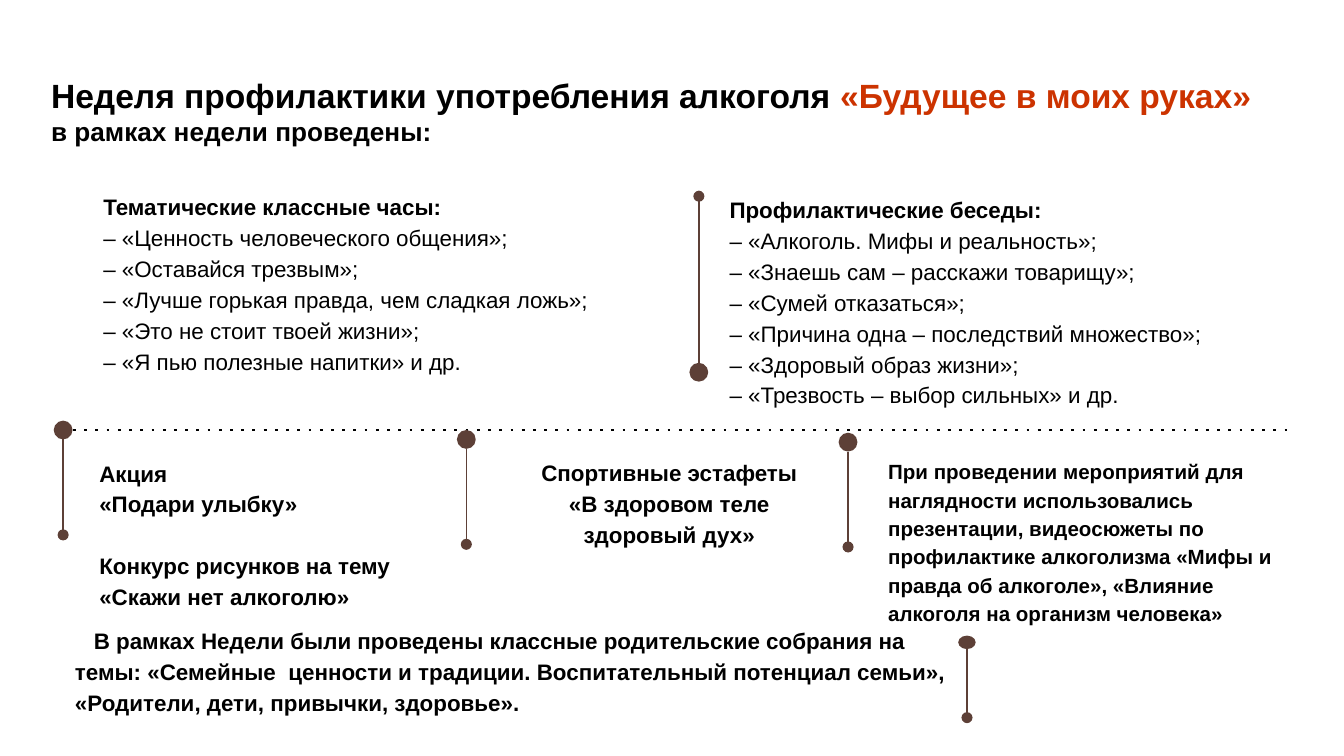
"""Build the slide on the alcohol prevention week."""
from lxml.etree import SubElement
from pptx import Presentation
from pptx.dml.color import RGBColor
from pptx.enum.shapes import MSO_CONNECTOR, MSO_SHAPE
from pptx.enum.text import MSO_ANCHOR, MSO_AUTO_SIZE, PP_ALIGN
from pptx.oxml.ns import qn
from pptx.util import Inches, Pt

BLACK = RGBColor(0x00, 0x00, 0x00)
RED = RGBColor(0xCC, 0x33, 0x00)
BROWN = RGBColor(0x5D, 0x40, 0x37)
FONT = "Arial"

TITLE = "Неделя профилактики употребления алкоголя "
THEME = "«Будущее в моих руках»"
LEAD = "в рамках недели проведены:"

LISTS = [
    ((0.67, 1.31, 4.62, 1.53), "Тематические классные часы:", [
        "«Ценность человеческого общения»;",
        "«Оставайся трезвым»;",
        "«Лучше горькая правда, чем сладкая ложь»;",
        "«Это не стоит твоей жизни»;",
        "«Я пью полезные напитки» и др.",
    ]),
    ((5.33, 1.33, 4.53, 1.8), "Профилактические беседы:", [
        "«Алкоголь. Мифы и реальность»;",
        "«Знаешь сам – расскажи товарищу»;",
        "«Сумей отказаться»;",
        "«Причина одна – последствий множество»;",
        "«Здоровый образ жизни»;",
        "«Трезвость – выбор сильных» и др.",
    ]),
]
ACTS = ["Акция", "«Подари улыбку»", "Конкурс рисунков на тему «Скажи нет алкоголю»"]
SPORT = "Спортивные эстафеты\v«В здоровом теле здоровый дух»"
MEDIA = ("При проведении мероприятий для наглядности использовались "
         "презентации, видеосюжеты по профилактике алкоголизма «Мифы и "
         "правда об алкоголе», «Влияние алкоголя на организм человека»")
HOME = ("В рамках Недели были проведены классные родительские собрания на "
        "темы: «Семейные  ценности и традиции. Воспитательный потенциал семьи», "
        "«Родители, дети, привычки, здоровье».")

DOT = 0.14
PINS = [
    (0.4, 3.13, DOT, DOT, 3.98),
    (3.4, 3.2, DOT, DOT, 4.05),
    (5.13, 2.7, DOT, DOT, 1.46),
    (6.24, 3.22, DOT, DOT, 4.07),
    (7.13, 4.73, 0.13, 0.1, 5.34),
]


def place(shape, box):
    shape.left, shape.top, shape.width, shape.height = map(Inches, box)


def frame(shape, anchor=MSO_ANCHOR.TOP):
    text = shape.text_frame
    text.word_wrap = True
    text.auto_size = MSO_AUTO_SIZE.NONE
    text.vertical_anchor = anchor
    text.margin_left = text.margin_right = Inches(0.1)
    text.margin_top = text.margin_bottom = Inches(0.1)
    return text


def style(font, size, bold=True, color=BLACK):
    font.name, font.size, font.bold = FONT, Pt(size), bold
    font.color.rgb = color


def add_text(slide, box, lines, size=12, align=PP_ALIGN.LEFT, plain=False):
    text = frame(slide.shapes.add_textbox(*map(Inches, box)))
    for i, line in enumerate(lines):
        para = text.add_paragraph() if i else text.paragraphs[0]
        para.text = line
        para.alignment = align
        para.line_spacing = 1.15
        style(para.font, size, bold=not (plain and i))
    return text.paragraphs


def add_line(slide, start, end, color, width):
    ends = map(Inches, (*start, *end))
    line = slide.shapes.add_connector(MSO_CONNECTOR.STRAIGHT, *ends)
    line.line.color.rgb = color
    line.line.width = Pt(width)
    props = line._element.spPr
    SubElement(props, qn("a:effectLst"))
    return props.find(qn("a:ln"))


def add_pin(slide, left, top, width, height, end):
    dot = slide.shapes.add_shape(
        MSO_SHAPE.OVAL, *map(Inches, (left, top, width, height)))
    dot.shadow.inherit = False
    dot.fill.solid()
    dot.fill.fore_color.rgb = BROWN
    dot.line.fill.background()
    mid = left + width / 2
    start = top + height if end > top else top
    line = add_line(slide, (mid, start), (mid, end), BROWN, 0.75)
    SubElement(line, qn("a:tailEnd"), type="oval")


def add_title(slide):
    title = slide.shapes.title
    place(title, (0.28, 0.41, 9.32, 0.78))
    para = frame(title, MSO_ANCHOR.BOTTOM).paragraphs[0]
    para.alignment = PP_ALIGN.LEFT
    for words, size, color in (
            (TITLE, 18, BLACK), (THEME, 18, RED), (LEAD, 14, BLACK)):
        if words == LEAD:
            para.add_line_break()
        run = para.add_run()
        run.text = words
        style(run.font, size, color=color)


def main():
    deck = Presentation()
    deck.slide_width = Inches(10)
    deck.slide_height = deck.slide_width * 9 // 16
    slide = deck.slides.add_slide(deck.slide_layouts[5])
    rule = add_line(slide, (0.46, 3.2), (9.58, 3.2), BLACK, 1.5)
    SubElement(rule, qn("a:prstDash"), val="dot")
    add_title(slide)
    for pin in PINS:
        add_pin(slide, *pin)
    for box, head, items in LISTS:
        add_text(slide, box, [head] + [f"– {item}" for item in items], plain=True)
    acts = add_text(slide, (0.64, 3.29, 2.78, 1.32), ACTS)
    acts[-1].space_before = Pt(16.6)
    add_text(slide, (3.79, 3.29, 2.38, 0.8), [SPORT], align=PP_ALIGN.CENTER)
    add_text(slide, (6.51, 3.29, 3.24, 1.49), [MEDIA], size=11)
    home = add_text(slide, (0.46, 4.54, 6.8, 0.8), [HOME])
    home[0]._p.get_or_add_pPr().set("indent", str(Inches(0.14)))
    deck.save("out.pptx")


if __name__ == "__main__":
    main()
